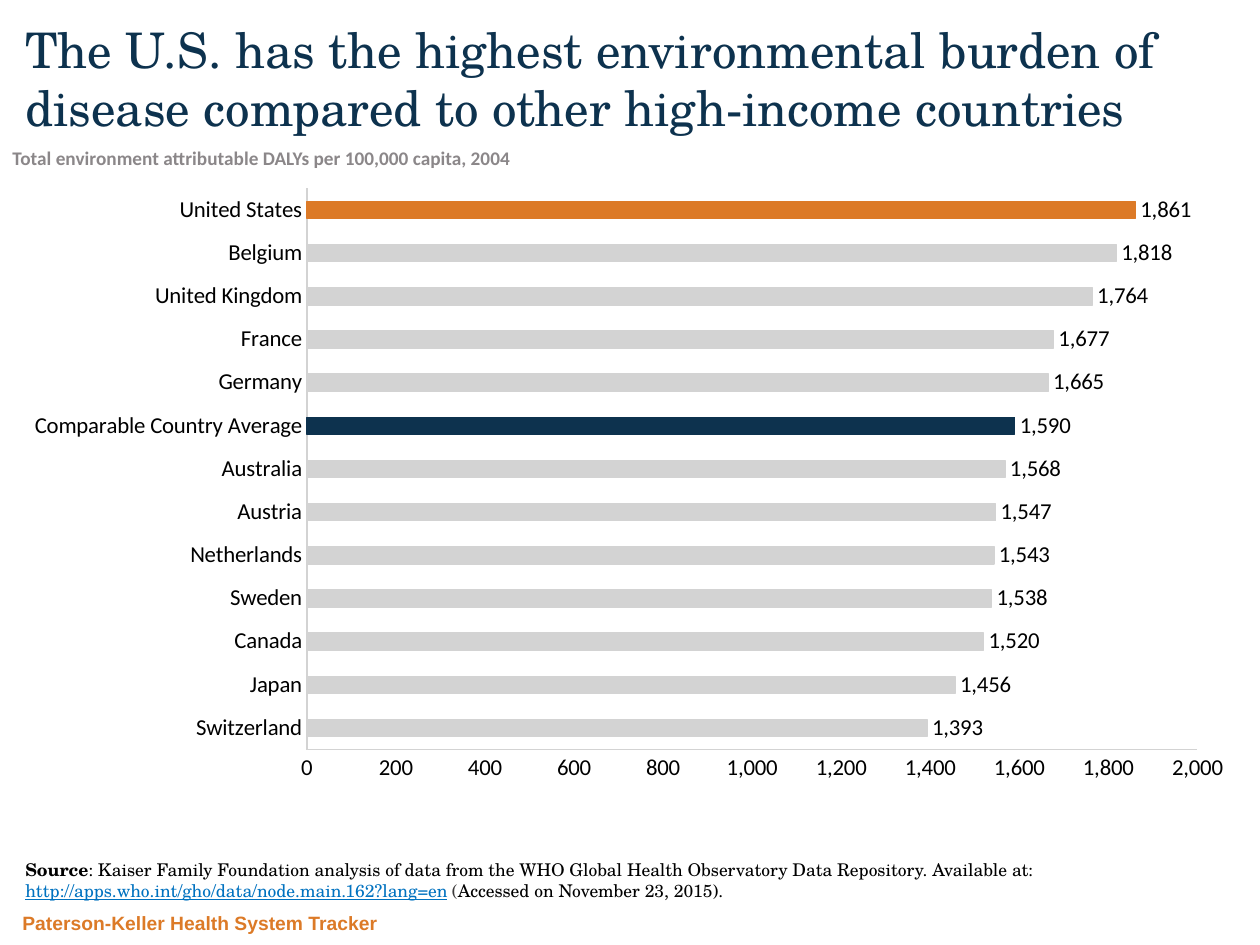
from lxml import etree
from pptx import Presentation
from pptx.chart.data import CategoryChartData
from pptx.dml.color import RGBColor
from pptx.enum.chart import XL_CHART_TYPE, XL_LABEL_POSITION, XL_TICK_MARK
from pptx.enum.text import MSO_ANCHOR
from pptx.oxml.ns import qn
from pptx.util import Emu, Pt

PX = 914400 // 126  # EMU per px

NAVY = RGBColor(0x0D, 0x32, 0x4E)
ORANGE = RGBColor(0xDC, 0x7A, 0x27)
LIGHT_GRAY = RGBColor(0xD3, 0xD3, 0xD3)
MID_GRAY = RGBColor(0x8B, 0x87, 0x89)
DARK_GRAY = RGBColor(0x3C, 0x3A, 0x3B)
LINK_BLUE = RGBColor(0x00, 0x72, 0xC0)
BLACK = RGBColor(0, 0, 0)

SERIF, SANS, FOOTER_FONT = "TeX Gyre Schola", "Calibri", "Arial"
TOP, BOTTOM = MSO_ANCHOR.TOP, MSO_ANCHOR.BOTTOM
BAR = XL_CHART_TYPE.BAR_CLUSTERED
OUTSIDE_END = XL_LABEL_POSITION.OUTSIDE_END
NO_TICKS = XL_TICK_MARK.NONE

BURDEN = {
    "Switzerland": 1393,
    "Japan": 1456,
    "Canada": 1520,
    "Sweden": 1538,
    "Netherlands": 1543,
    "Austria": 1547,
    "Australia": 1568,
    "Comparable Country Average": 1590,
    "Germany": 1665,
    "France": 1677,
    "United Kingdom": 1764,
    "Belgium": 1818,
    "United States": 1861,
}
HIGHLIGHTS = {"Comparable Country Average": NAVY, "United States": ORANGE}
PLOT_AREA = {"x": 0.24, "y": 0.02, "w": 0.72, "h": 0.91}  # shares of the chart


def px_box(*lengths):
    return [Emu(length * PX) for length in lengths]


def add_text(slide, box, runs, font, size, anchor=TOP, wrap=True):
    """Add one paragraph; each run is (text, colour, bold, underline)."""
    frame = slide.shapes.add_textbox(*px_box(*box)).text_frame
    frame.word_wrap = wrap
    frame.vertical_anchor = anchor
    paragraph = frame.paragraphs[0]
    for text, color, bold, underline in runs:
        run = paragraph.add_run()
        run.text = text
        run.font.name = font
        run.font.size = Pt(size)
        run.font.bold = bold
        run.font.underline = underline
        run.font.color.rgb = color


def style_line(line, color):
    line.color.rgb = color
    line.width = Pt(0.75)


def style_bar(bar_format, color):
    bar_format.fill.solid()
    bar_format.fill.fore_color.rgb = color
    style_line(bar_format.line, color)


def place_plot_area(chart):
    plot_area = chart.plots[0]._element.getparent()
    layout = plot_area.find(qn("c:layout"))
    if layout is None:
        layout = etree.Element(qn("c:layout"))
        plot_area.insert(0, layout)
    manual = etree.SubElement(layout, qn("c:manualLayout"))
    settings = {"layoutTarget": "inner", "xMode": "edge", "yMode": "edge", **PLOT_AREA}
    for tag, value in settings.items():
        etree.SubElement(manual, qn(f"c:{tag}")).set("val", str(value))


def add_burden_chart(slide, box):
    data = CategoryChartData(number_format="#,##0")
    data.categories = list(BURDEN)
    data.add_series("Series 1", list(BURDEN.values()))
    chart = slide.shapes.add_chart(BAR, *px_box(*box), data).chart
    chart.has_legend = False
    chart.has_title = False
    chart.font.name = SANS
    chart.font.size = Pt(13)
    chart.font.color.rgb = BLACK
    place_plot_area(chart)

    # Axes
    for axis in (chart.category_axis, chart.value_axis):
        axis.has_major_gridlines = False
        axis.major_tick_mark = axis.minor_tick_mark = NO_TICKS
        style_line(axis.format.line, LIGHT_GRAY)
    values = chart.value_axis
    values.minimum_scale, values.maximum_scale, values.major_unit = 0, 2000, 200
    values.tick_labels.number_format = "#,##0"
    values.tick_labels.number_format_is_linked = False

    # Bars and their values
    plot = chart.plots[0]
    plot.gap_width = 150
    plot.vary_by_categories = False
    bars = plot.series[0]
    style_bar(bars.format, LIGHT_GRAY)
    for index, country in enumerate(BURDEN):
        if country in HIGHLIGHTS:
            style_bar(bars.points[index].format, HIGHLIGHTS[country])
    labels = bars.data_labels
    labels.show_value = True
    labels.position = OUTSIDE_END
    labels.number_format = "#,##0"
    labels.number_format_is_linked = False


def main():
    deck = Presentation()
    deck.slide_width, deck.slide_height = px_box(1260, 945)
    slide = deck.slides.add_slide(deck.slide_layouts[6])

    # Footer
    add_text(slide, (10, 903, 1005, 38),
             [("Paterson-Keller Health System Tracker", ORANGE, True, False)],
             FOOTER_FONT, 11, BOTTOM)

    # Source
    add_text(slide, (13, 806, 1235, 101), [
        ("Source", BLACK, True, False),
        (": Kaiser Family Foundation analysis of data from the WHO Global Health "
         "Observatory Data Repository. Available at: ", BLACK, False, False),
        ("http://apps.who.int/gho/data/node.main.162?lang=en", LINK_BLUE, False, True),
        (" (", DARK_GRAY, False, False),
        ("Accessed on November 23, 2015).", BLACK, False, False),
    ], SERIF, 10, BOTTOM)

    # Title and chart heading
    add_text(slide, (13, 13, 1235, 126),
             [("The U.S. has the highest environmental burden of disease "
               "compared to other high-income countries", NAVY, False, False)],
             SERIF, 28)
    add_text(slide, (0, 140, 536, 36),
             [("Total environment attributable DALYs per 100,000 capita, 2004",
               MID_GRAY, True, False)],
             SANS, 11, wrap=False)

    # Chart
    add_burden_chart(slide, (10, 176, 1237, 617))

    deck.save("out.pptx")


if __name__ == "__main__":
    main()
